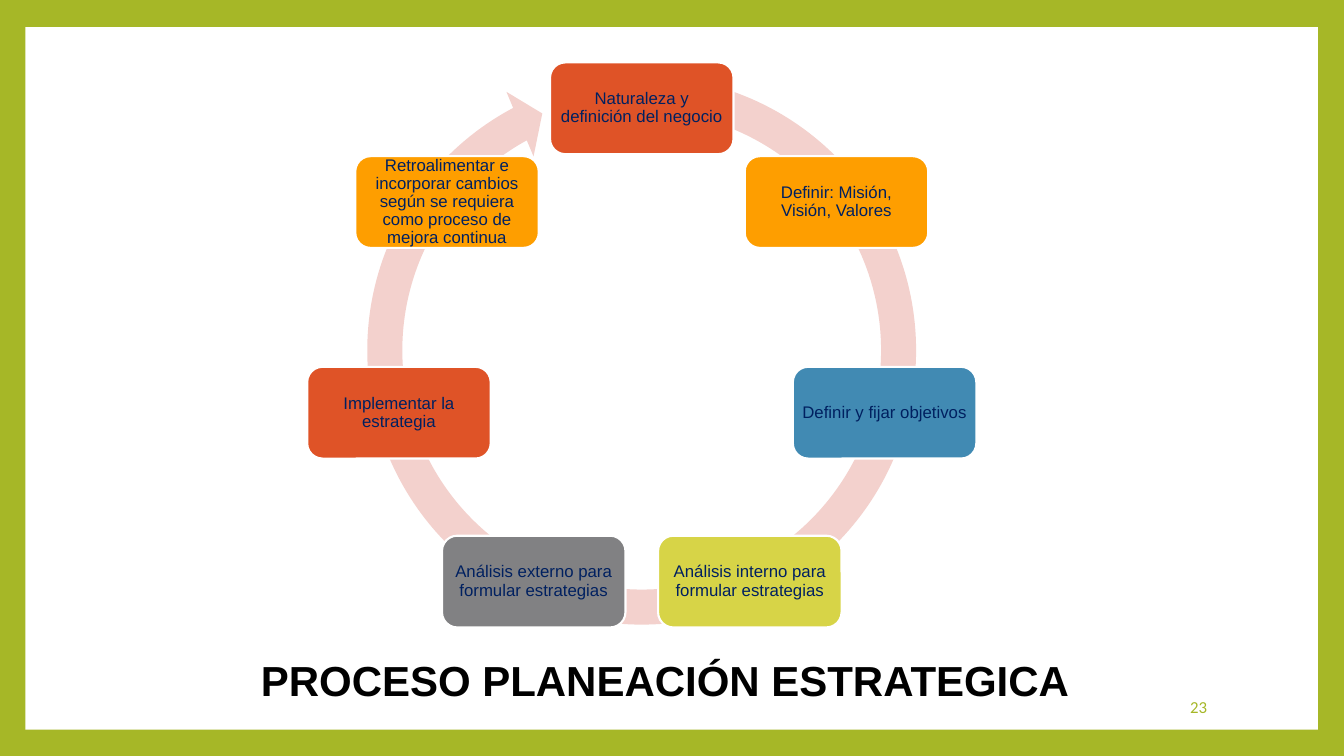
from collections import namedtuple
from math import cos, radians, sin

from pptx import Presentation
from pptx.dml.color import RGBColor
from pptx.enum.shapes import MSO_SHAPE
from pptx.enum.text import MSO_ANCHOR, PP_ALIGN
from pptx.util import Inches, Pt

RECTANGLE = MSO_SHAPE.RECTANGLE
ROUNDED = MSO_SHAPE.ROUNDED_RECTANGLE
CIRCULAR_ARROW = MSO_SHAPE.CIRCULAR_ARROW
CENTER, RIGHT = PP_ALIGN.CENTER, PP_ALIGN.RIGHT
TOP, MIDDLE = MSO_ANCHOR.TOP, MSO_ANCHOR.MIDDLE

GREEN, WHITE, BLACK, NAVY = "A6B727", "FFFFFF", "000000", "002060"
RED, ORANGE = "DF5327", "FE9E00"
BLUE, YELLOW, GREY, PINK = "418AB3", "D7D447", "818183", "F3D1CD"

STEPS = [
    ("Naturaleza y definición del negocio", RED),
    ("Definir: Misión, Visión, Valores", ORANGE),
    ("Definir y fijar objetivos", BLUE),
    ("Análisis interno para formular estrategias", YELLOW),
    ("Análisis externo para formular estrategias", GREY),
    ("Implementar la estrategia", RED),
    ("Retroalimentar e incorporar cambios según se requiera "
     "como proceso de mejora continua", ORANGE),
]

# Shares of the ring's box, in percent
STEP_WIDTH, STEP_HEIGHT = 31.43, 15.72
ORBIT_RADIUS, ORBIT_X, ORBIT_Y = 42.66, 50, 51.21
ARROW_ADJUSTMENTS = (0.06, 3.31, 145.03, 169.57, 0.06)

Box = namedtuple("Box", "left top width height")


def color(value):
    return RGBColor.from_string(value)


def part(box, left, top, width, height):
    """Return the box inside another one, given in percent of its size."""
    return Box(int(box.left + box.width * left / 100),
               int(box.top + box.height * top / 100),
               int(box.width * width / 100),
               int(box.height * height / 100))


def add_filled(page, kind, box, fill):
    shape = page.shapes.add_shape(kind, *box)
    shape.shadow.inherit = False
    shape.fill.solid()
    shape.fill.fore_color.rgb = color(fill)
    shape.line.fill.background()
    return shape


def write(frame, text, size, ink, align, anchor=MIDDLE, name="Arial", bold=False):
    frame.vertical_anchor = anchor
    para = frame.paragraphs[0]
    para.text = text
    para.alignment = align
    para.font.size = Pt(size)
    para.font.name = name
    para.font.bold = bold
    para.font.color.rgb = color(ink)
    return para


def add_frame(page, box):
    page.background.fill.solid()
    page.background.fill.fore_color.rgb = color(GREEN)
    add_filled(page, RECTANGLE, box, WHITE)


def add_step(page, box, text, fill):
    shape = add_filled(page, ROUNDED, box, fill)
    shape.line.color.rgb = color(WHITE)
    shape.line.width = Pt(1.5)
    frame = shape.text_frame
    frame.word_wrap = True
    frame.margin_left = frame.margin_right = Inches(0.05)
    frame.margin_top = frame.margin_bottom = Inches(0.05)
    write(frame, text, 12, NAVY, CENTER).line_spacing = 0.9


def add_cycle(page, box):
    """Draw the ring arrow with the steps clockwise from the top."""
    arrow = add_filled(page, CIRCULAR_ARROW, box, PINK)
    for index, value in enumerate(ARROW_ADJUSTMENTS):
        arrow.adjustments[index] = value
    for index, (text, fill) in enumerate(STEPS):
        angle = radians(360 * index / len(STEPS))
        left = ORBIT_X + ORBIT_RADIUS * sin(angle) - STEP_WIDTH / 2
        top = ORBIT_Y - ORBIT_RADIUS * cos(angle) - STEP_HEIGHT / 2
        add_step(page, part(box, left, top, STEP_WIDTH, STEP_HEIGHT), text, fill)


def add_title(page, box):
    frame = page.shapes.add_textbox(*box).text_frame
    frame.word_wrap = False
    write(frame, "PROCESO PLANEACIÓN ESTRATEGICA", 30, BLACK, CENTER, TOP, bold=True)


def add_page_number(page, box):
    frame = page.shapes.add_textbox(*box).text_frame
    frame.word_wrap = True
    write(frame, "23", 12, GREEN, RIGHT, name="Calibri")


def main():
    deck = Presentation()
    deck.slide_width, deck.slide_height = Inches(13.33), Inches(7.5)
    page = deck.slides.add_slide(deck.slide_layouts[6])
    whole = Box(0, 0, deck.slide_width, deck.slide_height)
    add_frame(page, part(whole, 1.88, 3.6, 96.17, 92.93))
    add_cycle(page, part(whole, 26.03, 7.73, 43.44, 77.2))
    add_title(page, part(whole, 18.38, 85.87, 62.27, 8.13))
    add_page_number(page, part(whole, 76.52, 90.8, 14.03, 5.33))
    deck.save("out.pptx")


if __name__ == "__main__":
    main()
